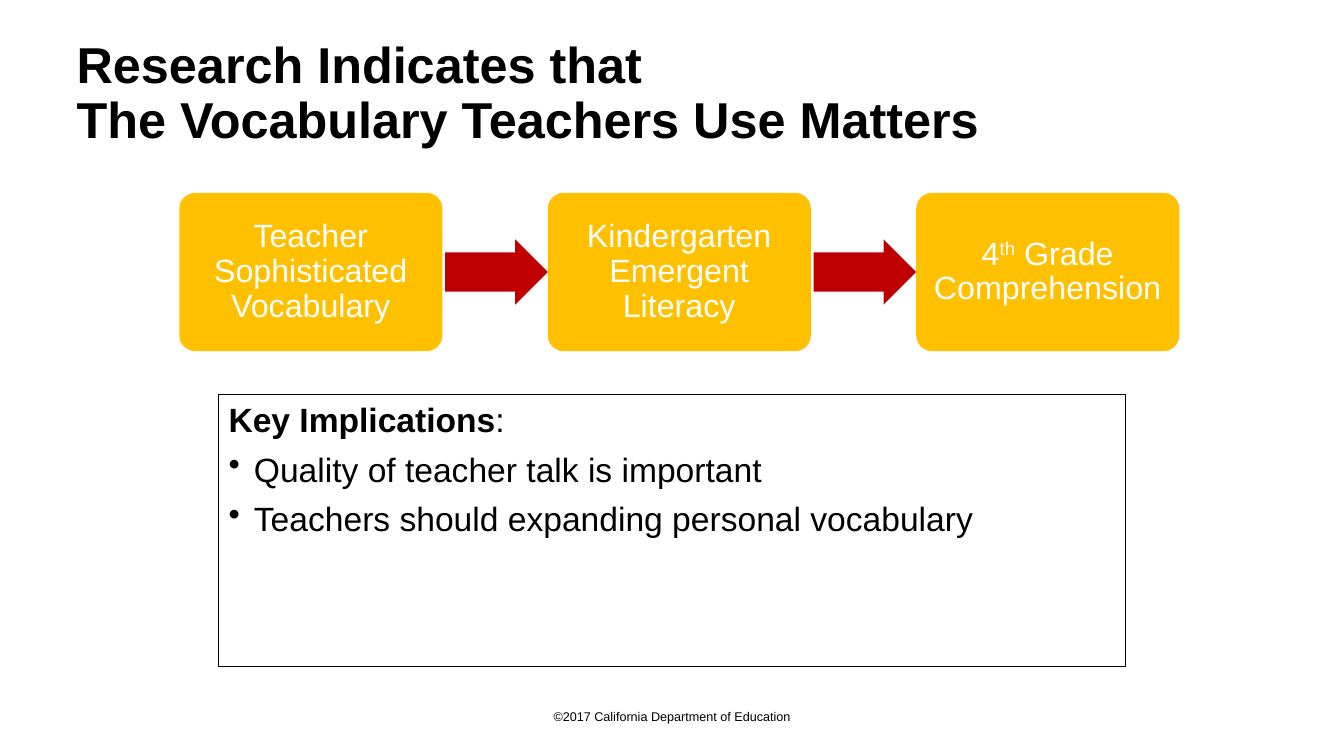
from dataclasses import dataclass

from lxml import etree
from pptx import Presentation
from pptx import util as u
from pptx.dml.color import RGBColor
from pptx.enum import shapes, text
from pptx.oxml import ns


@dataclass(frozen=True)
class Theme:
    font: str = "Arial"
    ink: str = "000000"
    paper: str = "FFFFFF"
    step: str = "FFC000"
    arrow: str = "C00000"
    title_size: float = 36
    body_size: float = 24
    step_size: float = 23
    footer_size: float = 9


THEME = Theme()


def write(paragraph, content, size, color=THEME.ink, bold=False, superscript=False):
    for index, line in enumerate(content.split("\n")):
        if index:
            paragraph.add_line_break()
        run = paragraph.add_run()
        run.text = line
        run.font.name = THEME.font
        run.font.size = u.Pt(size)
        run.font.bold = bold
        run.font.color.rgb = RGBColor.from_string(color)
        if superscript:
            run._r.get_or_add_rPr().set("baseline", "30000")


def add_bullet(paragraph):
    properties = paragraph._p.get_or_add_pPr()
    properties.set("marL", str(u.Cm(0.64)))
    properties.set("indent", str(u.Cm(-0.64)))
    bullet = etree.SubElement(properties, ns.qn("a:buChar"))
    bullet.set("char", "•")


def add_text_box(slide, box):
    frame = slide.shapes.add_textbox(*map(u.Cm, box)).text_frame
    frame.word_wrap = True
    frame.vertical_anchor = text.MSO_ANCHOR.MIDDLE
    return frame


def add_filled_shape(slide, kind, box, fill):
    shape = slide.shapes.add_shape(kind, *map(u.Cm, box))
    shape.shadow.inherit = False
    shape.fill.solid()
    shape.fill.fore_color.rgb = RGBColor.from_string(fill)
    shape.line.fill.background()
    return shape


def add_title(slide, box, content):
    paragraph = add_text_box(slide, box).paragraphs[0]
    paragraph.line_spacing = 0.9
    write(paragraph, content, THEME.title_size, bold=True)


def add_footer(slide, box, content):
    paragraph = add_text_box(slide, box).paragraphs[0]
    paragraph.alignment = text.PP_ALIGN.CENTER
    write(paragraph, content, THEME.footer_size)


def add_step(slide, box, runs):
    shape = add_filled_shape(
        slide, shapes.MSO_SHAPE.ROUNDED_RECTANGLE, box, THEME.step)
    shape.adjustments[0] = 0.1
    frame = shape.text_frame
    frame.word_wrap = True
    frame.vertical_anchor = text.MSO_ANCHOR.MIDDLE
    frame.margin_left = frame.margin_right = u.Cm(0.25)
    frame.margin_top = frame.margin_bottom = u.Cm(0.25)
    paragraph = frame.paragraphs[0]
    paragraph.alignment = text.PP_ALIGN.CENTER
    paragraph.line_spacing = 0.9
    for content, superscript in runs:
        write(paragraph, content, THEME.step_size, THEME.paper,
              superscript=superscript)


def add_process(slide, box, steps):
    left, top, width, height = box
    step_width, arrow_height, arrow_inset = 6.63, 1.65, 0.07
    pitch = (width - step_width) / (len(steps) - 1)
    for index, runs in enumerate(steps):
        step_left = left + index * pitch
        add_step(slide, (step_left, top, step_width, height), runs)
        if index < len(steps) - 1:
            arrow_box = (step_left + step_width + arrow_inset,
                         top + (height - arrow_height) / 2,
                         pitch - step_width - arrow_inset, arrow_height)
            arrow = add_filled_shape(
                slide, shapes.MSO_SHAPE.RIGHT_ARROW, arrow_box, THEME.arrow)
            arrow.adjustments[0] = 0.6
            arrow.adjustments[1] = 0.5


def add_implications(slide, box, heading, points):
    shape = add_filled_shape(slide, shapes.MSO_SHAPE.RECTANGLE, box, THEME.paper)
    shape.line.color.rgb = RGBColor.from_string(THEME.ink)
    shape.line.width = u.Pt(0.75)
    frame = shape.text_frame
    frame.word_wrap = True
    frame.vertical_anchor = text.MSO_ANCHOR.TOP
    write(frame.paragraphs[0], heading, THEME.body_size, bold=True)
    write(frame.paragraphs[0], ":", THEME.body_size)
    for point in points:
        paragraph = frame.add_paragraph()
        add_bullet(paragraph)
        write(paragraph, point, THEME.body_size)
    for paragraph in frame.paragraphs:
        paragraph.alignment = text.PP_ALIGN.LEFT
        paragraph.space_before = u.Pt(6.7)


def main():
    presentation = Presentation()
    presentation.slide_width = u.Cm(33.87)
    presentation.slide_height = u.Cm(19.05)
    slide = presentation.slides.add_slide(presentation.slide_layouts[6])
    add_footer(slide, (0, 17.73, 33.87, 0.64),
               "©2017 California Department of Education")
    add_title(slide, (1.68, 0.84, 27.91, 3.1),
              "Research Indicates that\nThe Vocabulary Teachers Use Matters")
    add_process(slide, (4.52, 4.86, 25.2, 3.99), [
        [("Teacher Sophisticated Vocabulary", False)],
        [("Kindergarten Emergent Literacy", False)],
        [("4", False), ("th", True), (" Grade Comprehension", False)],
    ])
    add_implications(slide, (5.51, 9.93, 22.86, 6.86), "Key Implications", [
        "Quality of teacher talk is important",
        "Teachers should expanding personal vocabulary",
    ])
    presentation.save("out.pptx")


if __name__ == "__main__":
    main()
